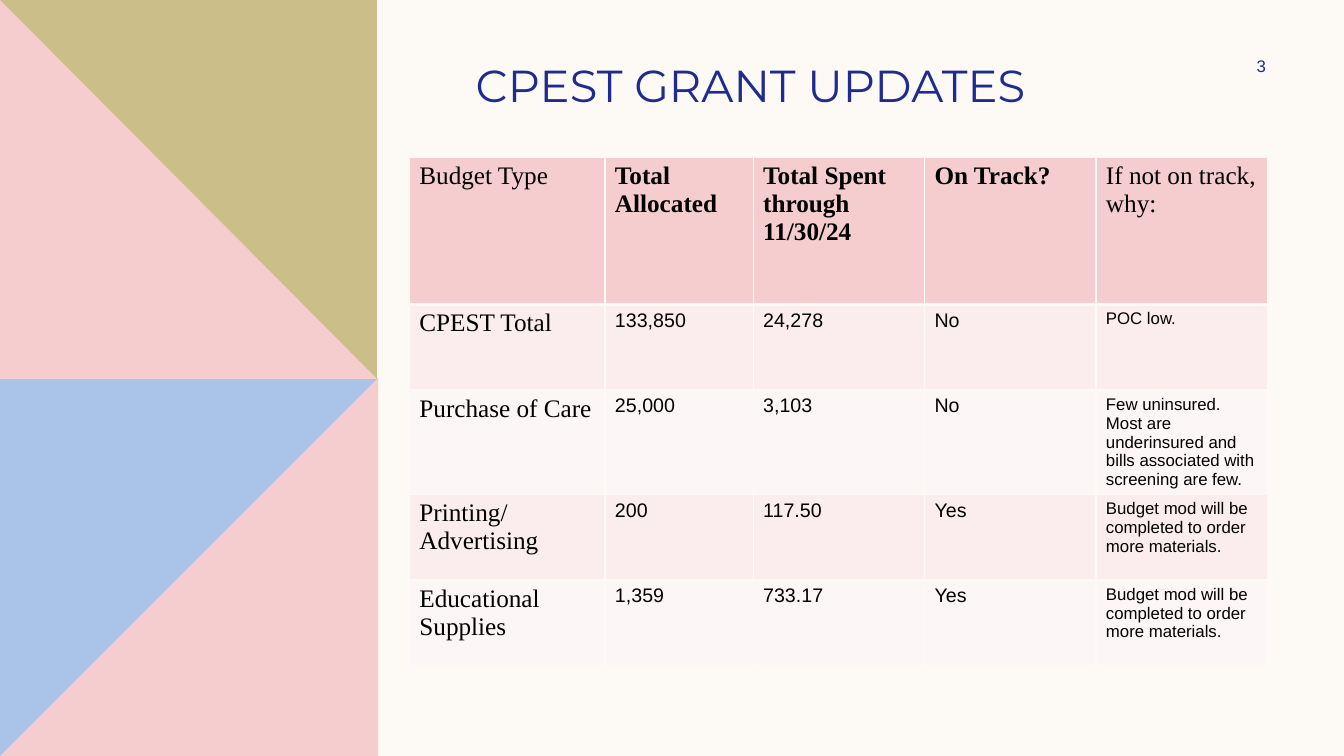
from dataclasses import dataclass

from lxml import etree
from pptx import Presentation
from pptx.dml.color import RGBColor
from pptx.enum.text import MSO_ANCHOR, PP_ALIGN
from pptx.oxml.ns import qn
from pptx.util import Inches, Pt

MIDDLE = MSO_ANCHOR.MIDDLE
LEFT, CENTER = PP_ALIGN.LEFT, PP_ALIGN.CENTER


@dataclass(frozen=True)
class Theme:
    cream: str = "FDFAF6"
    pink: str = "F5CDCE"
    gold: str = "CCBE89"
    sky: str = "AAC3E8"
    navy: str = "1F2C8F"
    black: str = "000000"
    bands: tuple = ("FBEDED", "FDF6F6")
    display: str = "Montserrat"
    serif: str = "Times New Roman"
    sans: str = "Arial"
    title: int = 32
    label: int = 18
    value: int = 14
    note: int = 12


THEME = Theme()

COLS = [1.94, 1.47, 1.7, 1.7, 1.7]
ROWS = [1.46] + [0.85] * 4
BUDGET = [
    ["Budget Type", "Total Allocated", "Total Spent through 11/30/24",
     "On Track?", "If not on track, why:"],
    ["CPEST Total", "133,850", "24,278", "No", "POC low."],
    ["Purchase of Care", "25,000", "3,103", "No",
     "Few uninsured. Most are underinsured and bills associated with "
     "screening are few."],
    ["Printing/\nAdvertising", "200", "117.50", "Yes",
     "Budget mod will be completed to order more materials."],
    ["Educational Supplies", "1,359", "733.17", "Yes",
     "Budget mod will be completed to order more materials."],
]


def paint(fill, color):
    fill.solid()
    fill.fore_color.rgb = RGBColor.from_string(color)


def write(frame, text, font, size, color, bold=False, align=LEFT):
    """Put each line of text in its own paragraph."""
    frame.word_wrap = True
    for i, line in enumerate(text.split("\n")):
        para = frame.add_paragraph() if i else frame.paragraphs[0]
        para.alignment = align
        run = para.add_run()
        run.text = line
        run.font.name = font
        run.font.size = Pt(size)
        run.font.bold = bold
        run.font.color.rgb = RGBColor.from_string(color)


def add_label(slide, box, text, font, size, align=LEFT):
    frame = slide.shapes.add_textbox(*map(Inches, box)).text_frame
    frame.vertical_anchor = MIDDLE
    write(frame, text, font, size, THEME.navy, align=align)


def add_outline(slide, box, points, color):
    """Draw a polygon whose points are fractions of the box."""
    left, top, width, height = box
    spots = [(Inches(left + x * width), Inches(top + y * height))
             for x, y in points]
    pen = slide.shapes.build_freeform(*spots[0])
    pen.add_line_segments(spots[1:], close=True)
    shape = pen.convert_to_shape()
    shape.shadow.inherit = False
    paint(shape.fill, color)
    shape.line.fill.background()


def add_tile(slide, box, color, corners):
    """Draw a square with a pink triangle over half of it."""
    square = [(0, 0), (1, 0), (1, 1), (0, 1)]
    add_outline(slide, box, square, color)
    add_outline(slide, box, corners, THEME.pink)


def add_panel(slide, box):
    left, top, width, height = box
    half = height / 2
    add_tile(slide, (left, top + half, width, half), THEME.sky,
             [(1, 0), (1, 1), (0, 1)])
    add_tile(slide, (left, top, width - 0.01, half + 0.01), THEME.gold,
             [(0, 0), (1, 1), (0, 1)])


def add_edges(cell, top, bottom):
    """Rule the four sides of a cell; widths are in points."""
    props = cell._tc.get_or_add_tcPr()
    sides = [("L", 1), ("R", 1), ("T", top), ("B", bottom)]
    for i, (side, width) in enumerate(sides):
        line = etree.Element(qn(f"a:ln{side}"), w=str(Pt(width)))
        solid = etree.SubElement(line, qn("a:solidFill"))
        etree.SubElement(solid, qn("a:srgbClr"), val=THEME.cream)
        props.insert(i, line)


def cell_style(row, col):
    """Return font, size and bold for a place in the table."""
    last = len(COLS) - 1
    if row == 0:
        return THEME.serif, THEME.label, 0 < col < last
    if col == 0:
        return THEME.serif, THEME.label, False
    return THEME.sans, THEME.note if col == last else THEME.value, False


def add_budget(slide, left, top):
    box = (left, top, sum(COLS), sum(ROWS))
    table = slide.shapes.add_table(
        len(ROWS), len(COLS), *map(Inches, box)).table
    for col, width in zip(table.columns, COLS):
        col.width = Inches(width)
    for row, height in zip(table.rows, ROWS):
        row.height = Inches(height)
    for r, texts in enumerate(BUDGET):
        color = THEME.bands[(r - 1) % 2] if r else THEME.pink
        for c, text in enumerate(texts):
            cell = table.cell(r, c)
            paint(cell.fill, color)
            add_edges(cell, 3 if r == 1 else 1, 3 if r == 0 else 1)
            font, size, bold = cell_style(r, c)
            write(cell.text_frame, text, font, size, THEME.black, bold)


def add_header(slide, box):
    left, top, width, height = box
    add_label(slide, (left, top, 7.49, height), "CPEST GRANT UPDATES",
              THEME.display, THEME.title)
    add_label(slide, (left + width - 1.08, top, 1.08, 0.3), "3",
              THEME.sans, THEME.note, CENTER)


def main():
    deck = Presentation()
    deck.slide_width, deck.slide_height = Inches(13.33), Inches(7.5)
    slide = deck.slides.add_slide(deck.slide_layouts[6])
    paint(slide.background.fill, THEME.cream)
    add_panel(slide, (0, 0, 3.75, 7.5))
    add_budget(slide, 4.06, 1.56)
    add_header(slide, (4.62, 0.5, 8.43, 0.67))
    deck.save("out.pptx")


if __name__ == "__main__":
    main()
